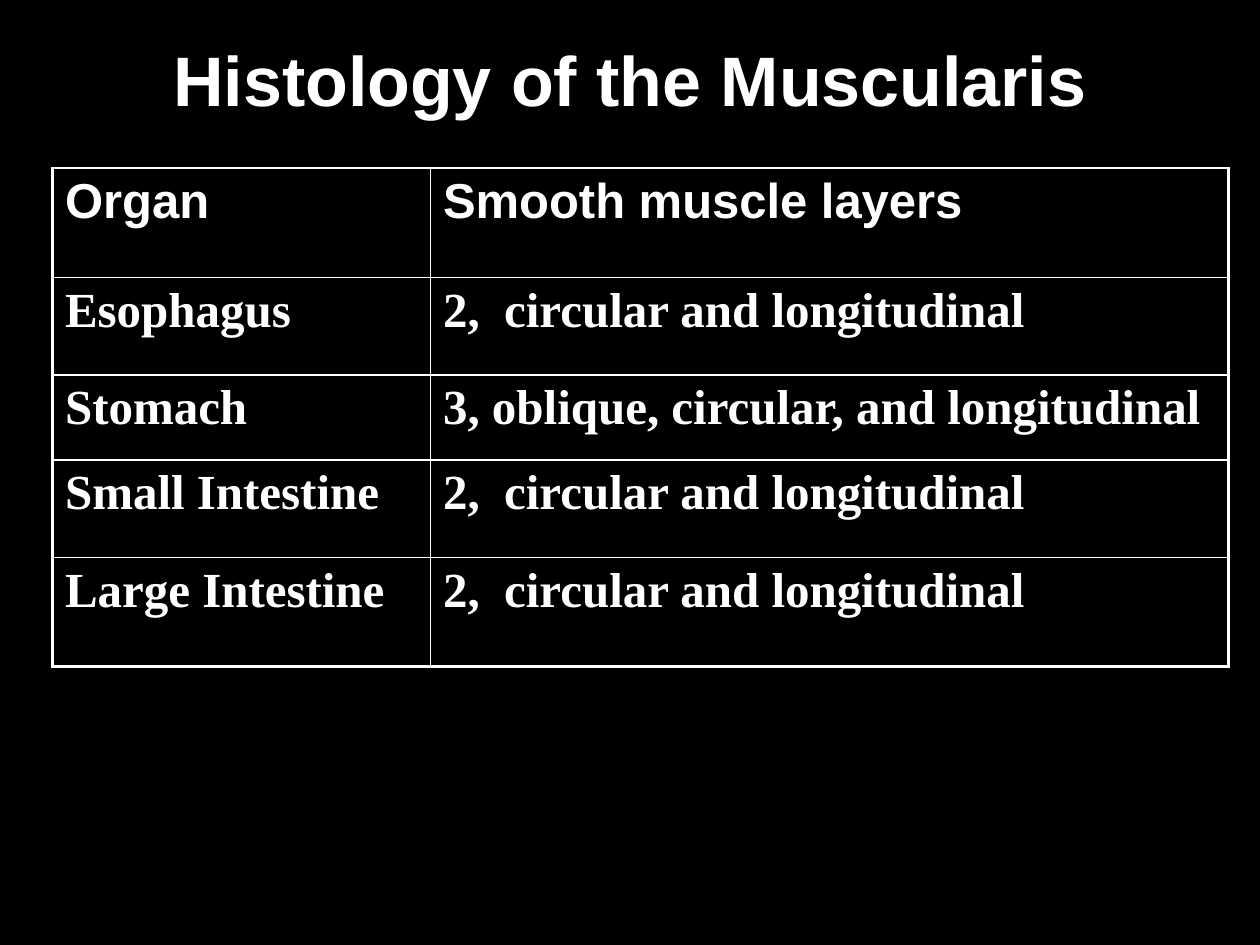
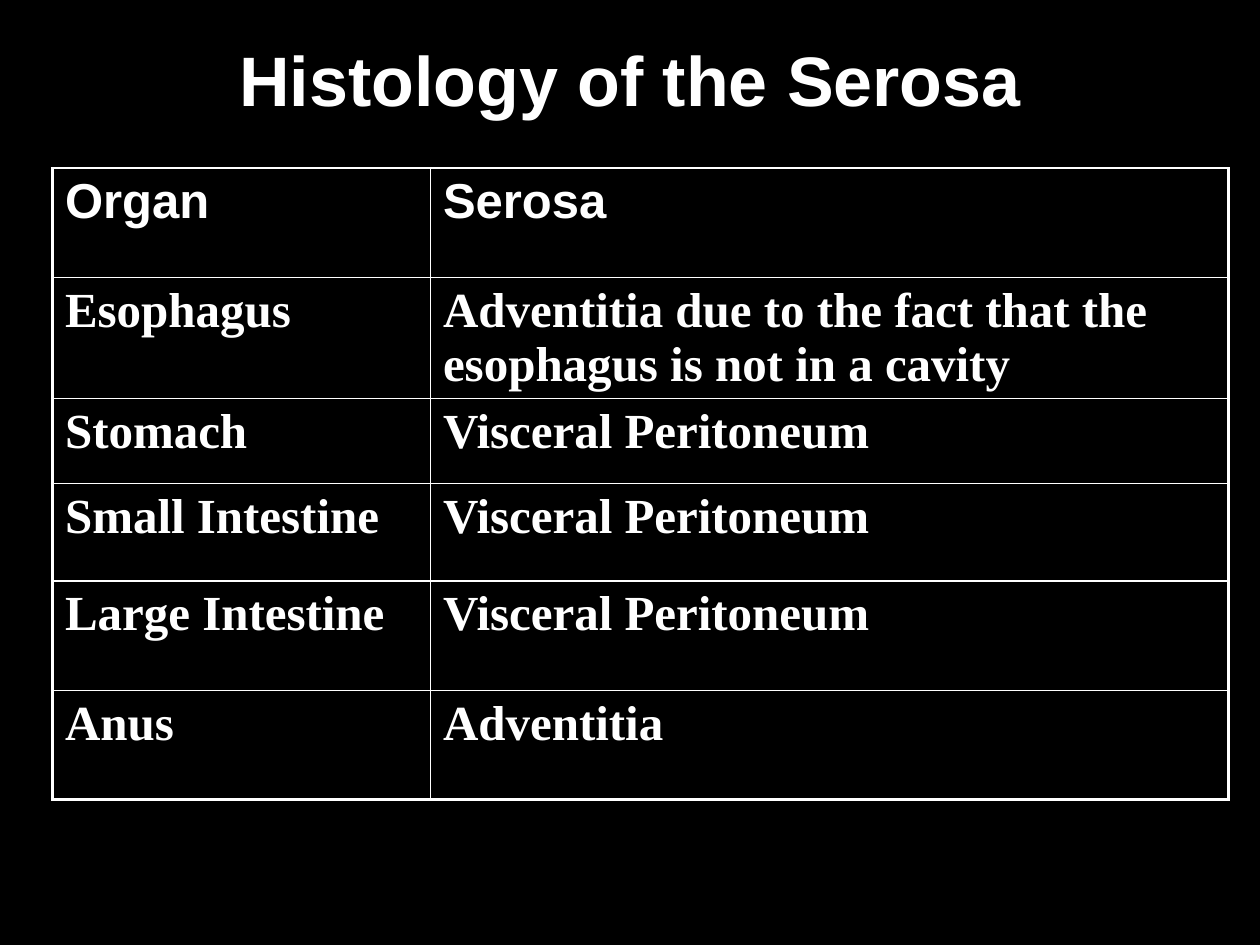
"""Build two slides that compare gut organs, each a title above a bordered table."""
from lxml import etree
from pptx import Presentation
from pptx.dml.color import RGBColor
from pptx.enum.text import MSO_ANCHOR, PP_ALIGN
from pptx.oxml.ns import qn
from pptx.util import Pt

MIDDLE = MSO_ANCHOR.MIDDLE
CENTER = PP_ALIGN.CENTER
BLACK, WHITE = "000000", "FFFFFF"
HEAD, BODY = "Arial", "Times New Roman"
THIN, THICK = 1, 2.25
WIDTHS = [216, 456]
HEIGHTS = [62.5, 55.75, 48.6, 55.75, 62.5, 62.5]
TWO = "2,  circular and longitudinal"
LINING = "Visceral Peritoneum"

SLIDES = [
    ("Histology of the Muscularis", 285.1, [
        ("Organ", "Smooth muscle layers"),
        ("Esophagus", TWO),
        ("Stomach", "3, oblique, circular, and longitudinal"),
        ("Small Intestine", TWO),
        ("Large Intestine", TWO),
    ]),
    ("Histology of the Serosa", 366.5, [
        ("Organ", "Serosa"),
        ("Esophagus", "Adventitia due to the fact that the esophagus is not in a cavity"),
        ("Stomach", LINING),
        ("Small Intestine", LINING),
        ("Large Intestine", LINING),
        ("Anus", "Adventitia"),
    ]),
]


def paint(fill, color):
    fill.solid()
    fill.fore_color.rgb = RGBColor.from_string(color)


def style(frame, face, size):
    font = frame.paragraphs[0].runs[0].font
    font.name, font.size, font.bold = face, Pt(size), True
    paint(font.fill, WHITE)


prs = Presentation()
prs.slide_width, prs.slide_height = Pt(720), Pt(540)
paint(prs.slide_master.background.fill, BLACK)

for name, height, rows in SLIDES:
    slide = prs.slides.add_slide(prs.slide_layouts[5])
    title = slide.shapes.title
    title.left, title.top, title.width, title.height = Pt(0), Pt(18), Pt(720), Pt(54)
    title.text_frame.text = name
    title.text_frame.vertical_anchor = MIDDLE
    title.text_frame.paragraphs[0].alignment = CENTER
    style(title.text_frame, HEAD, 40)

    frame = slide.shapes.add_table(
        len(rows), len(WIDTHS), Pt(30), Pt(96), Pt(sum(WIDTHS)), Pt(height))
    table = frame.table
    table.first_row = table.horz_banding = False
    for col, width in zip(table.columns, WIDTHS):
        col.width = Pt(width)
    for row, tall in zip(table.rows, HEIGHTS):
        row.height = Pt(tall)
    frame.height = Pt(height)

    for r, texts in enumerate(rows):
        for c, text in enumerate(texts):
            cell = table.cell(r, c)
            cell.text_frame.text = text
            style(cell.text_frame, BODY if r else HEAD, 28)
            edges = {
                "a:lnL": THIN if c else THICK,
                "a:lnR": THICK if c else THIN,
                "a:lnT": THIN,
                "a:lnB": THICK if r == len(rows) - 1 else THIN,
            }
            props = cell._tc.get_or_add_tcPr()
            for tag, width in edges.items():
                line = etree.SubElement(props, qn(tag), w=str(Pt(width)))
                solid = etree.SubElement(line, qn("a:solidFill"))
                etree.SubElement(solid, qn("a:srgbClr"), val=WHITE)
            paint(cell.fill, BLACK)

prs.save("out.pptx")
